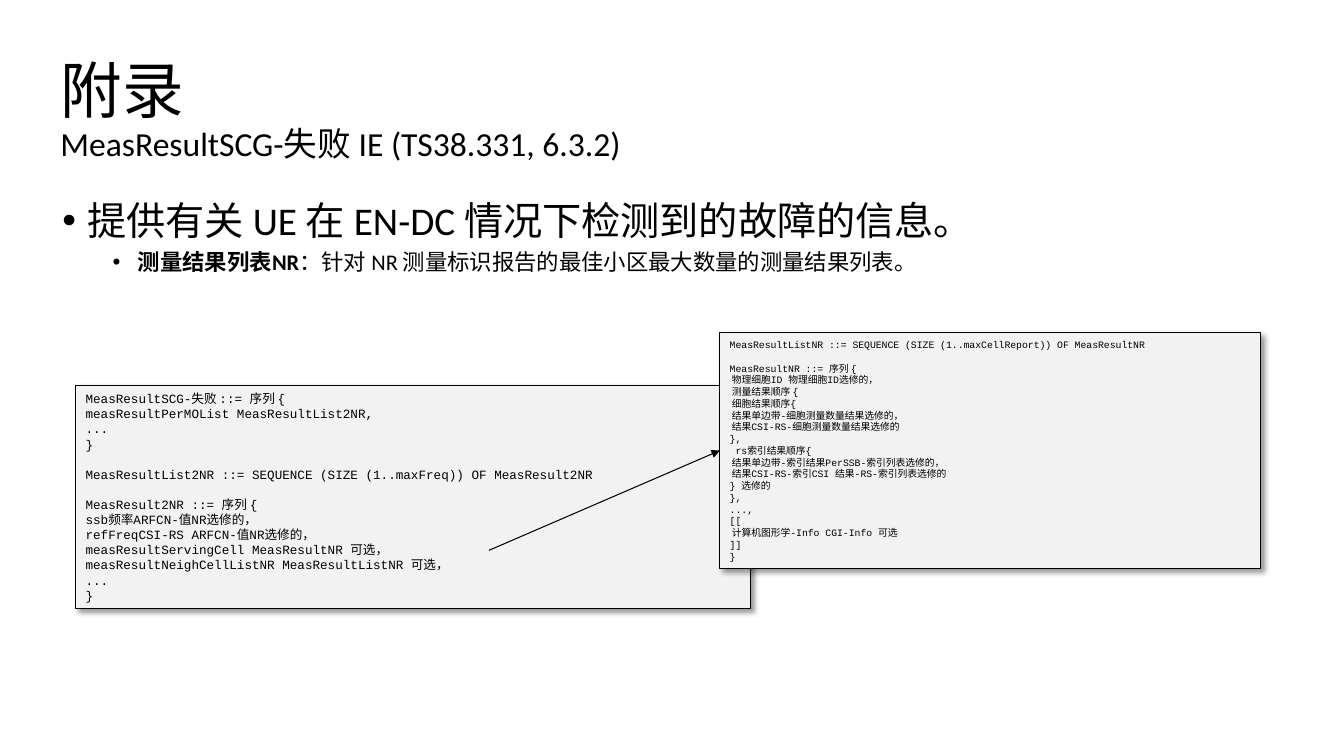
"""Build the appendix slide on the MeasResultSCG failure information element."""
import pptx
import pptx.dml.color
import pptx.enum.shapes
import pptx.enum.text
import pptx.oxml
import pptx.oxml.ns
import pptx.util
from lxml import etree

BLACK = pptx.dml.color.RGBColor(0x00, 0x00, 0x00)
PANEL = pptx.dml.color.RGBColor(0xF2, 0xF2, 0xF2)
TEXT_FONT = "Calibri"
CODE_FONT = "Courier New"
WIDTH, HEIGHT = pptx.util.Inches(13.33), pptx.util.Inches(7.5)

TITLE_AREA = (3.9, 6.93, 68.57, 15.73)
TITLE_LINES = [("附录", 44), ("MeasResultSCG-失败 IE (TS38.331, 6.3.2)", 24)]

BODY_AREA = (3.9, 26, 89.27, 64)
BULLETS = [
    {"margin": 0.25, "size": 28, "before": 10,
     "spans": [("提供有关 UE 在 EN-DC 情况下检测到的故障的信息。", False)]},
    {"margin": 0.75, "size": 16, "before": 5,
     "spans": [("测量结果列表NR", True),
               ("：针对 NR 测量标识报告的最佳小区最大数量的测量结果列表。", False)]},
]

LISTINGS = [
    {"area": (5.63, 50.93, 50.19, 29.6), "size": 9, "gap": 10.7, "sections": [
        ["MeasResultSCG-失败 ::= 序列 {",
         "measResultPerMOList MeasResultList2NR,",
         "...",
         "}"],
        ["MeasResultList2NR ::= SEQUENCE (SIZE (1..maxFreq)) OF MeasResult2NR"],
        ["MeasResult2NR ::= 序列 {",
         "ssb频率ARFCN-值NR选修的，",
         "refFreqCSI-RS ARFCN-值NR选修的，",
         "measResultServingCell MeasResultNR 可选，",
         "measResultNeighCellListNR MeasResultListNR 可选，",
         "...",
         "}"],
    ]},
    {"area": (53.56, 44, 40.21, 31.2), "size": 7, "gap": 8.3, "sections": [
        ["MeasResultListNR ::= SEQUENCE (SIZE (1..maxCellReport)) OF MeasResultNR"],
        ["MeasResultNR ::= 序列 {",
         " 物理细胞ID 物理细胞ID选修的，",
         " 测量结果顺序 {",
         " 细胞结果顺序{",
         " 结果单边带-细胞测量数量结果选修的，",
         " 结果CSI-RS-细胞测量数量结果选修的",
         "},",
         " rs索引结果顺序{",
         " 结果单边带-索引结果PerSSB-索引列表选修的，",
         " 结果CSI-RS-索引CSI 结果-RS-索引列表选修的",
         "} 选修的",
         "},",
         "...,",
         "[[",
         " 计算机图形学-Info CGI-Info 可选",
         "]]",
         "}"],
    ]},
]
ARROW_START = (36.38, 72.8)


def place(*shares):
    """Turn percentages of the slide, alternating across and down, into lengths."""
    return [int(share * (WIDTH, HEIGHT)[i % 2] / 100) for i, share in enumerate(shares)]


def style(span, size, font, bold=False):
    """Set the look of one run."""
    span.font.size = pptx.util.Pt(size)
    span.font.name = font
    span.font.bold = bold
    span.font.color.rgb = BLACK


def add_element(parent, tag, **attributes):
    """Append a DrawingML element to a parent."""
    return etree.SubElement(parent, pptx.oxml.ns.qn(tag), **attributes)


def add_title(page):
    """Add the heading with its smaller second line."""
    frame = page.shapes.add_textbox(*place(*TITLE_AREA)).text_frame
    frame.word_wrap = True
    frame.vertical_anchor = pptx.enum.text.MSO_ANCHOR.MIDDLE
    frame.margin_left = frame.margin_right = pptx.util.Inches(0.08)
    frame.margin_top = frame.margin_bottom = pptx.util.Inches(0.04)
    para = frame.paragraphs[0]
    para.text = "\v".join(text for text, size in TITLE_LINES)
    para.line_spacing = 0.9
    for span, (text, size) in zip(para.runs, TITLE_LINES):
        style(span, size, TEXT_FONT)


def add_bullets(page):
    """Add the bulleted statement and its detail."""
    frame = page.shapes.add_textbox(*place(*BODY_AREA)).text_frame
    frame.word_wrap = True
    for index, bullet in enumerate(BULLETS):
        para = frame.add_paragraph() if index else frame.paragraphs[0]
        para.level = index
        para.line_spacing = 0.9
        para.space_before = pptx.util.Pt(bullet["before"])
        properties = para._p.get_or_add_pPr()
        properties.set("marL", str(pptx.util.Inches(bullet["margin"])))
        properties.set("indent", str(pptx.util.Inches(-0.25)))
        add_element(properties, "a:buFont", typeface="Arial")
        add_element(properties, "a:buChar", char="•")
        for text, bold in bullet["spans"]:
            span = para.add_run()
            span.text = text
            style(span, bullet["size"], TEXT_FONT, bold)


def add_shadow(box):
    """Give a box a soft shadow towards the lower right."""
    box.shadow.inherit = False
    effects = box._element.spPr.find(pptx.oxml.ns.qn("a:effectLst"))
    shadow = add_element(effects, "a:outerShdw", blurRad=str(pptx.util.Pt(4)),
                         dist=str(pptx.util.Pt(3)), dir=str(45 * 60000),
                         algn="tl", rotWithShape="0")
    color = add_element(shadow, "a:srgbClr", val=str(BLACK))
    add_element(color, "a:alpha", val="40000")


def add_listing(page, listing):
    """Add a code panel whose sections are set apart by one line."""
    box = page.shapes.add_shape(pptx.enum.shapes.MSO_SHAPE.RECTANGLE, *place(*listing["area"]))
    box.fill.solid()
    box.fill.fore_color.rgb = PANEL
    box.line.color.rgb = BLACK
    box.line.width = pptx.util.Pt(0.75)
    add_shadow(box)
    frame = box.text_frame
    frame.word_wrap = True
    frame.vertical_anchor = pptx.enum.text.MSO_ANCHOR.MIDDLE
    frame.text = "\n".join(line for section in listing["sections"] for line in section)
    for para in frame.paragraphs:
        para.alignment = pptx.enum.text.PP_ALIGN.LEFT
        style(para.runs[0], listing["size"], CODE_FONT)
    start = 0
    for section in listing["sections"][:-1]:
        start += len(section)
        frame.paragraphs[start].space_before = pptx.util.Pt(listing["gap"])
    return box


def add_arrow(page, target):
    """Point from the field in the first listing to the target panel."""
    start = place(*ARROW_START)
    arrow = page.shapes.add_connector(pptx.enum.shapes.MSO_CONNECTOR.STRAIGHT, *start, *start)
    arrow.end_connect(target, 1)
    arrow.line.color.rgb = BLACK
    arrow.line.width = pptx.util.Pt(0.75)
    add_element(arrow.line._get_or_add_ln(), "a:tailEnd", type="triangle")
    add_element(arrow._element.spPr, "a:effectLst")


def main():
    """Build and save the deck."""
    deck = pptx.Presentation()
    deck.slide_width, deck.slide_height = WIDTH, HEIGHT
    page = deck.slides.add_slide(deck.slide_layouts[6])
    add_bullets(page)
    add_title(page)
    panels = [add_listing(page, listing) for listing in LISTINGS]
    add_arrow(page, panels[-1])
    deck.save("out.pptx")


if __name__ == "__main__":
    main()
